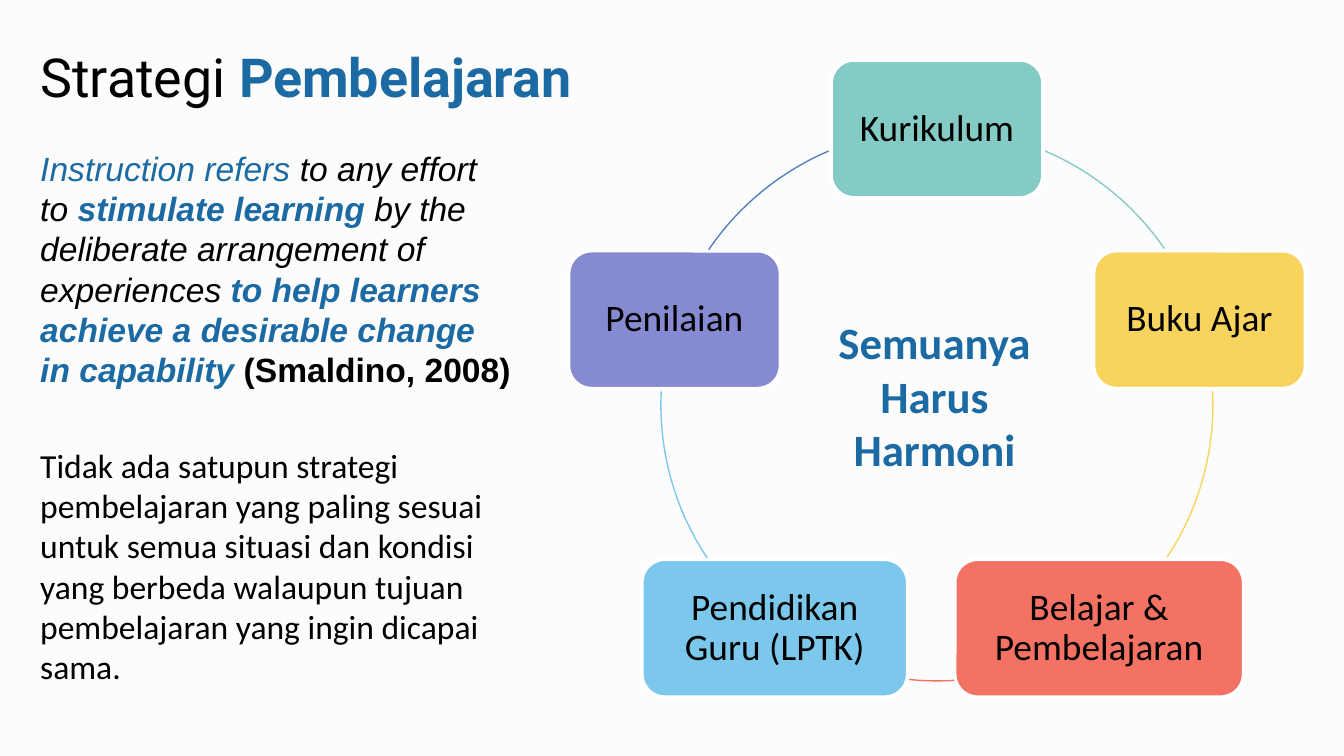
import math
from dataclasses import dataclass

from pptx import Presentation
from pptx.dml.color import RGBColor
from pptx.enum.shapes import MSO_SHAPE
from pptx.enum.text import MSO_ANCHOR, MSO_AUTO_SIZE, PP_ALIGN
from pptx.util import Emu, Pt

ROUND_RECT, ARC = MSO_SHAPE.ROUNDED_RECTANGLE, MSO_SHAPE.ARC
MIDDLE, TOP = MSO_ANCHOR.MIDDLE, MSO_ANCHOR.TOP
LEFT, CENTER = PP_ALIGN.LEFT, PP_ALIGN.CENTER
NO_FIT, GROW = MSO_AUTO_SIZE.NONE, MSO_AUTO_SIZE.SHAPE_TO_FIT_TEXT
EMU_PER_PX = 914400 / 134.4


@dataclass(frozen=True)
class Theme:
    bg: str = "FCFCFC"
    ink: str = "000000"
    accent: str = "1B6AA3"
    outline: str = "FFFFFF"
    teal: str = "84CBC5"
    yellow: str = "F8D35E"
    red: str = "F47264"
    sky: str = "7CC8EC"
    violet: str = "868AD1"
    blue: str = "4F81BD"
    title_font: str = "Roboto"
    quote_font: str = "Arial"
    body_font: str = "Calibri"
    title_size: float = 28.8
    body_size: int = 18
    node_size: int = 20
    center_size: int = 24


T = Theme()
CYCLE_X, CYCLE_Y, RADIUS = 937, 405, 276
NODE_H, NODE_INSET = 138, 17
NODES = [
    ("Kurikulum", 212, T.teal, T.teal, (293.1, 325.8)),
    ("Buku Ajar", 212, T.yellow, T.yellow, (357.2, 33.7)),
    ("Belajar & Pembelajaran", 289, T.red, T.red, (86.4, 95.9)),
    ("Pendidikan Guru (LPTK)", 266, T.sky, T.sky, (146.3, 182.8)),
    ("Penilaian", 212, T.violet, T.blue, (214.2, 246.9)),
]


def px(n):
    return Emu(round(n * EMU_PER_PX))


def rgb(value):
    return RGBColor.from_string(value)


def add_run(p, text, font, size, color=T.ink, bold=False, italic=False):
    r = p.add_run()
    r.text = text
    r.font.name, r.font.size = font, Pt(size)
    r.font.bold, r.font.italic = bold, italic
    r.font.color.rgb = rgb(color)


def add_title(s, box, runs):
    sp = s.shapes.title
    sp.left, sp.top, sp.width, sp.height = map(px, box)
    tf = sp.text_frame
    tf.auto_size, tf.vertical_anchor = NO_FIT, MIDDLE
    p = tf.paragraphs[0]
    p.alignment = LEFT
    for text, color, bold in runs:
        add_run(p, text, T.title_font, T.title_size, color, bold)


def add_text(s, box, paragraphs, font, size, align=LEFT, wrap=True):
    tf = s.shapes.add_textbox(*map(px, box)).text_frame
    tf.word_wrap, tf.auto_size, tf.vertical_anchor = wrap, GROW, TOP
    for i, runs in enumerate(paragraphs):
        p = tf.add_paragraph() if i else tf.paragraphs[0]
        p.alignment = align
        for text, *style in runs:
            add_run(p, text, font, size, *style)


def add_node(s, cx, cy, width, label, color):
    sp = s.shapes.add_shape(ROUND_RECT, px(cx - width / 2), px(cy - NODE_H / 2),
                            px(width), px(NODE_H))
    sp.shadow.inherit = False
    sp.fill.solid()
    sp.fill.fore_color.rgb = rgb(color)
    sp.line.color.rgb = rgb(T.outline)
    sp.line.width = Pt(2)
    tf = sp.text_frame
    tf.word_wrap, tf.vertical_anchor = True, MIDDLE
    tf.margin_left = tf.margin_right = tf.margin_top = tf.margin_bottom = px(NODE_INSET)
    p = tf.paragraphs[0]
    p.alignment, p.line_spacing = CENTER, 0.9
    add_run(p, label, T.body_font, T.node_size)


def add_arc(s, angles, color):
    sp = s.shapes.add_shape(ARC, px(CYCLE_X - RADIUS), px(CYCLE_Y - RADIUS),
                            px(2 * RADIUS), px(2 * RADIUS))
    sp.shadow.inherit = False
    sp.fill.background()
    sp.line.color.rgb = rgb(color)
    sp.line.width = Pt(0.75)
    for i, angle in enumerate(angles):
        sp.adjustments[i] = angle * 0.6


def add_cycle(s):
    for i, (label, width, fill, arc_color, angles) in enumerate(NODES):
        turn = math.tau * i / len(NODES)
        cx = CYCLE_X + RADIUS * math.sin(turn)
        cy = CYCLE_Y - RADIUS * math.cos(turn)
        add_node(s, cx, cy, width, label, fill)
        add_arc(s, angles, arc_color)


def main():
    prs = Presentation()
    prs.slide_width, prs.slide_height = px(1344), px(756)
    s = prs.slides.add_slide(prs.slide_layouts[5])
    s.background.fill.solid()
    s.background.fill.fore_color.rgb = rgb(T.bg)

    add_title(s, (27, 34, 688, 83),
              [("Strategi ", T.ink, False), ("Pembelajaran", T.accent, True)])
    add_cycle(s)
    add_text(s, (823, 308, 223, 176),
             [[(word, T.accent, True)] for word in ("Semuanya", "Harus", "Harmoni")],
             T.body_font, T.center_size, CENTER, False)
    add_text(s, (27, 141, 497, 258), [[
        ("Instruction refers ", T.accent, False, True),
        ("to any effort to ", T.ink, False, True),
        ("stimulate learning ", T.accent, True, True),
        ("by the deliberate arrangement of experiences ", T.ink, False, True),
        ("to help learners achieve a desirable change in capability ", T.accent, True, True),
        ("(Smaldino, 2008)", T.ink, True),
    ]], T.quote_font, T.body_size)
    add_text(s, (27, 438, 519, 258), [[
        ("Tidak ada satupun strategi pembelajaran yang paling sesuai untuk semua "
         "situasi dan kondisi yang berbeda walaupun tujuan pembelajaran yang "
         "ingin dicapai sama.",),
    ]], T.body_font, T.body_size)
    prs.save("out.pptx")


if __name__ == "__main__":
    main()
